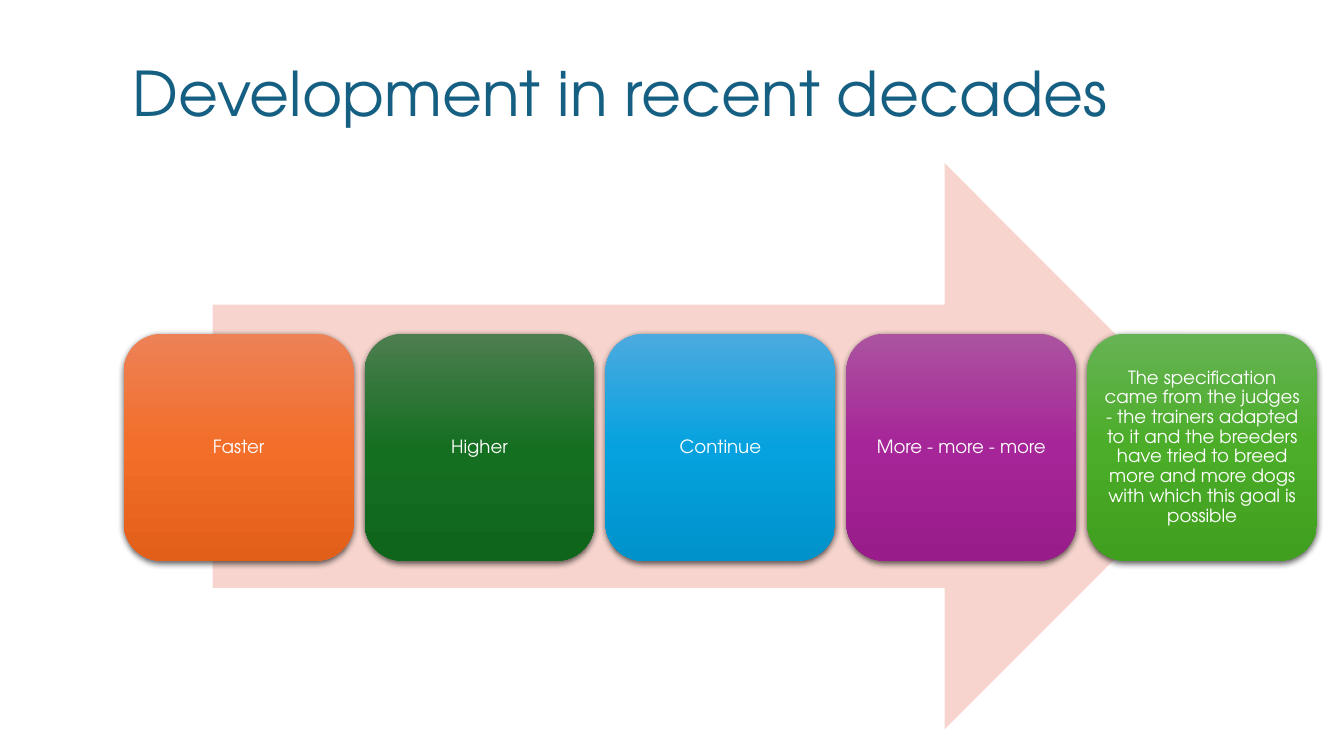
"""Build the slide on development in recent decades."""
from dataclasses import dataclass

from lxml import etree
from pptx import Presentation
from pptx import util as u
from pptx.dml.color import RGBColor
from pptx.enum import shapes, text
from pptx.oxml import ns

FONT = "TeX Gyre Adventor"
HUES = {"title": "156082", "arrow": "F7D5CE", "text": "FFFFFF", "shade": "000000"}
LEFT, TOP, WIDE, HIGH, STEP = 3.12, 8.41, 5.79, 5.72, 6.07


@dataclass
class Card:
    words: str
    hues: tuple[str, str, str]


CARDS = [
    Card("Faster", ("ED8257", "F26E29", "E25F1A")),
    Card("Higher", ("4D7E50", "156F21", "0F661B")),
    Card("Continue", ("4CAADF", "05A2DF", "0092CB")),
    Card("More - more - more", ("AC53A0", "A62598", "991C8B")),
    Card(
        "The specification came from the judges - the trainers adapted to it "
        "and the breeders have tried to breed more and more dogs with which "
        "this goal is possible",
        ("66B354", "4BAD28", "409F1E"),
    ),
]


def write(shape, words: str, *, size: float, hue: str, align, pad: float,
          after: float = 0) -> None:
    frame = shape.text_frame
    frame.word_wrap = True
    frame.vertical_anchor = text.MSO_ANCHOR.MIDDLE
    frame.margin_left = frame.margin_right = u.Cm(pad)
    frame.margin_top = frame.margin_bottom = u.Cm(pad)
    para = frame.paragraphs[0]
    para.alignment = align
    para.line_spacing = 0.9
    para.space_after = u.Pt(after)
    run = para.add_run()
    run.text = words
    run.font.name = FONT
    run.font.size = u.Pt(size)
    run.font.color.rgb = RGBColor.from_string(hue)


def add(tree, kind, left: float, top: float, wide: float, high: float):
    shape = tree.add_shape(kind, u.Cm(left), u.Cm(top), u.Cm(wide), u.Cm(high))
    shape.shadow.inherit = False
    shape.line.fill.background()
    return shape


def node(root, tag: str, **attrs):
    return etree.SubElement(root, ns.qn(tag), {k: str(v) for k, v in attrs.items()})


def blend(shape, hues: tuple[str, str, str]) -> None:
    shape.fill.gradient()
    grad = shape._element.spPr.find(ns.qn("a:gradFill"))
    for child in list(grad):
        grad.remove(child)
    stops = node(grad, "a:gsLst")
    for spot, hue in enumerate(hues):
        node(node(stops, "a:gs", pos=spot * 50000), "a:srgbClr", val=hue)
    node(grad, "a:lin", ang=5400000, scaled=0)


def shade(shape) -> None:
    glow = shape._element.spPr.find(ns.qn("a:effectLst"))
    cast = node(glow, "a:outerShdw", blurRad=u.Pt(4.5), dist=u.Pt(1.5),
                dir=5400000, algn="ctr", rotWithShape=0)
    node(node(cast, "a:srgbClr", val=HUES["shade"]), "a:alpha", val=63000)


def draw(tree, spot: int, card: Card) -> None:
    box = add(tree, shapes.MSO_SHAPE.ROUNDED_RECTANGLE,
              LEFT + spot * STEP, TOP, WIDE, HIGH)
    blend(box, card.hues)
    shade(box)
    write(box, card.words, size=13, hue=HUES["text"],
          align=text.PP_ALIGN.CENTER, pad=0.13, after=4.5)


def main() -> None:
    deck = Presentation()
    deck.slide_width, deck.slide_height = u.Cm(33.87), u.Cm(19.05)
    tree = deck.slides.add_slide(deck.slide_layouts[6]).shapes
    title = tree.add_textbox(u.Cm(3.1), u.Cm(1.24), u.Cm(26.64), u.Cm(2.41))
    write(title, "Development in recent decades", size=44, hue=HUES["title"],
          align=text.PP_ALIGN.LEFT, pad=0.25)
    arrow = add(tree, shapes.MSO_SHAPE.RIGHT_ARROW, 5.36, 4.11, 25.58, 14.27)
    arrow.fill.solid()
    arrow.fill.fore_color.rgb = RGBColor.from_string(HUES["arrow"])
    for spot, card in enumerate(CARDS):
        draw(tree, spot, card)
    deck.save("out.pptx")


if __name__ == "__main__":
    main()
